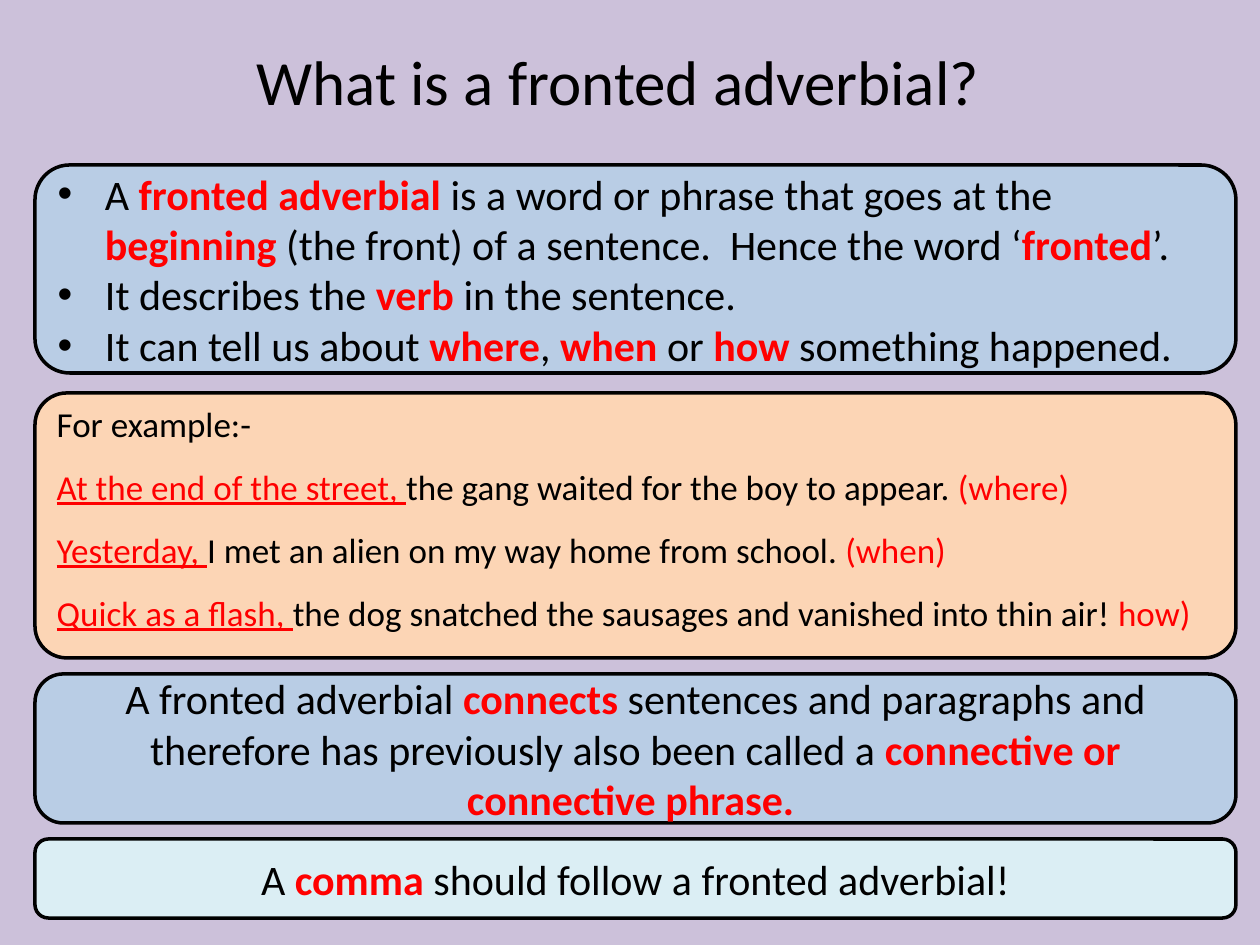
from dataclasses import dataclass

from lxml import etree
from pptx import Presentation
from pptx.dml.color import RGBColor
from pptx.enum import shapes, text
from pptx.oxml.ns import qn
from pptx.util import Emu, Pt

PX = 914400 // 126  # one scale: 126 px to the inch


@dataclass(frozen=True)
class Theme:
    font: str = "Calibri"
    background: str = "CCC1DA"
    ink: str = "000000"
    accent: str = "FF0000"
    blue: str = "B9CDE5"
    peach: str = "FCD5B5"
    aqua: str = "DBEEF4"
    title_size: int = 36
    body_size: int = 24
    example_size: int = 20
    line_width: int = 2


THEME = Theme()
PANEL_LEFT, PANEL_WIDTH = 35, 1201

# Each paragraph is a list of (words, style) runs
PLAIN, STRONG, UNDERLINED, LABEL = "plain", "strong", "underlined", "label"

DEFINITION = [
    [("A ", PLAIN), ("fronted adverbial ", STRONG),
     ("is a word or phrase that goes at the ", PLAIN), ("beginning", STRONG),
     (" (the front) of a sentence.  Hence the word ‘", PLAIN),
     ("fronted", STRONG), ("’.", PLAIN)],
    [("It describes the ", PLAIN), ("verb", STRONG), (" in the sentence.", PLAIN)],
    [("It can tell us about ", PLAIN), ("where", STRONG), (", ", PLAIN),
     ("when", STRONG), (" or ", PLAIN), ("how", STRONG),
     (" something happened.", PLAIN)],
]
EXAMPLES = [
    [("For example:-", PLAIN)],
    [("At the end of the street, ", UNDERLINED),
     ("the gang waited for the boy to appear. ", PLAIN), ("(where)", LABEL)],
    [("Yesterday, ", UNDERLINED),
     ("I met an alien on my way home from school. ", PLAIN), ("(when)", LABEL)],
    [("Quick as a flash, ", UNDERLINED),
     ("the dog snatched the sausages and vanished into thin air! ", PLAIN),
     ("how)", LABEL)],
]
CONNECTIVE = [
    [("A fronted adverbial ", PLAIN), ("connects", STRONG),
     (" sentences and paragraphs and therefore has previously also been called a ",
      PLAIN),
     ("connective or connective phrase. ", STRONG)],
]
COMMA = [
    [("A ", PLAIN), ("comma", STRONG),
     (" should follow a fronted adverbial!", PLAIN)],
]


def color(value):
    return RGBColor.from_string(value)


def place(shape, left, top, width, height):
    shape.left, shape.top = Emu(left * PX), Emu(top * PX)
    shape.width, shape.height = Emu(width * PX), Emu(height * PX)


def add_run(paragraph, words, style, size):
    run = paragraph.add_run()
    run.text = words
    font = run.font
    font.name, font.size = THEME.font, Pt(size)
    font.color.rgb = color(THEME.ink if style == PLAIN else THEME.accent)
    font.bold = style == STRONG
    font.underline = style == UNDERLINED


def write(shape, paragraphs, size, alignment, anchor=text.MSO_ANCHOR.MIDDLE):
    frame = shape.text_frame
    frame.word_wrap = True
    frame.auto_size = text.MSO_AUTO_SIZE.NONE
    frame.vertical_anchor = anchor
    for index, runs in enumerate(paragraphs):
        paragraph = frame.add_paragraph() if index else frame.paragraphs[0]
        paragraph.alignment = alignment
        paragraph.space_before = Pt(0)
        for words, style in runs:
            add_run(paragraph, words, style, size)


def paint(shape, fill):
    shape.fill.solid()
    shape.fill.fore_color.rgb = color(fill)
    shape.line.color.rgb = color(THEME.ink)
    shape.line.width = Pt(THEME.line_width)


def add_panel(slide, top, height, fill, rounding):
    panel = slide.shapes.add_shape(shapes.MSO_SHAPE.ROUNDED_RECTANGLE, 0, 0, 0, 0)
    place(panel, PANEL_LEFT, top, PANEL_WIDTH, height)
    panel.adjustments[0] = rounding
    panel.shadow.inherit = False
    paint(panel, fill)
    return panel


def round_placeholder(placeholder):
    """Give a placed placeholder the outline of a rounded rectangle."""
    geometry = etree.SubElement(placeholder._element.spPr, qn("a:prstGeom"),
                                prst="roundRect")
    etree.SubElement(geometry, qn("a:avLst"))


def main():
    presentation = Presentation()
    presentation.slide_width = Emu(1260 * PX)
    presentation.slide_height = Emu(945 * PX)
    slide = presentation.slides.add_slide(presentation.slide_layouts[1])
    slide.background.fill.solid()
    slide.background.fill.fore_color.rgb = color(THEME.background)
    left, center = text.PP_ALIGN.LEFT, text.PP_ALIGN.CENTER

    # Title
    title = slide.shapes.title
    place(title, 244, 36, 755, 89)
    write(title, [[("What is a fronted adverbial?", PLAIN)]],
          THEME.title_size, left)

    # Definition list
    definition = slide.placeholders[1]
    place(definition, PANEL_LEFT, 165, PANEL_WIDTH, 208)
    round_placeholder(definition)
    paint(definition, THEME.blue)
    write(definition, DEFINITION, THEME.body_size, left)

    # Example sentences, widely spaced below their heading
    examples = add_panel(slide, 393, 265, THEME.peach, 0.12)
    write(examples, EXAMPLES, THEME.example_size, left, text.MSO_ANCHOR.TOP)
    examples.text_frame.margin_top = 0
    for paragraph in examples.text_frame.paragraphs[1:]:
        paragraph.line_spacing = 1.5

    # Closing notes
    connective = add_panel(slide, 674, 149, THEME.blue, 0.19)
    write(connective, CONNECTIVE, THEME.body_size, center)
    comma = add_panel(slide, 839, 79, THEME.aqua, 0.17)
    write(comma, COMMA, THEME.body_size, center)

    presentation.save("out.pptx")


if __name__ == "__main__":
    main()
